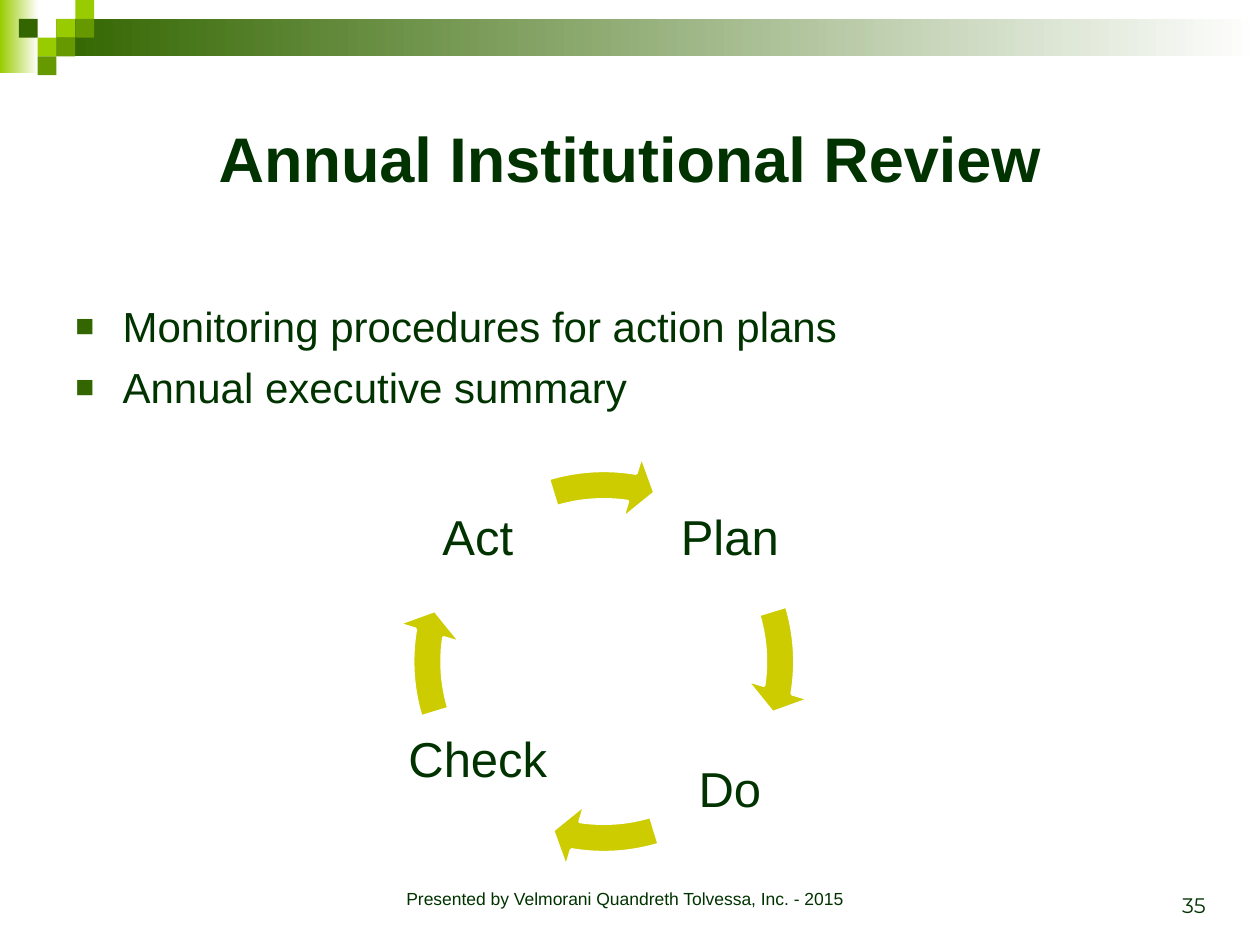
from pptx import Presentation
from pptx.dml.color import RGBColor
from pptx.enum.shapes import MSO_SHAPE
from pptx.enum.text import MSO_ANCHOR, PP_ALIGN
from pptx.oxml.ns import qn
from pptx.util import Pt
from lxml import etree

RECT, ARC_ARROW = MSO_SHAPE.RECTANGLE, MSO_SHAPE.CIRCULAR_ARROW
LEFT, CENTER, RIGHT = PP_ALIGN.LEFT, PP_ALIGN.CENTER, PP_ALIGN.RIGHT
TOP, MIDDLE, BOTTOM = MSO_ANCHOR.TOP, MSO_ANCHOR.MIDDLE, MSO_ANCHOR.BOTTOM

WHITE = RGBColor(0xFF, 0xFF, 0xFF)
INK = RGBColor(0x00, 0x33, 0x00)
DARK = RGBColor(0x33, 0x66, 0x00)
MID = RGBColor(0x66, 0x99, 0x00)
LIME = RGBColor(0x99, 0xCC, 0x00)
OLIVE = RGBColor(0xCC, 0xCC, 0x00)


class Deck:
    def __init__(self, width, height, font="Arial"):
        self.prs = Presentation()
        self.prs.slide_width, self.prs.slide_height = Pt(width), Pt(height)
        self.s = self.prs.slides.add_slide(self.prs.slide_layouts[6])
        self.font = font

    def shape(self, kind, x, y, w, h, color=None):
        sp = self.s.shapes.add_shape(kind, Pt(x), Pt(y), Pt(w), Pt(h))
        sp.shadow.inherit = False
        sp.line.fill.background()
        if color is not None:
            sp.fill.solid()
            sp.fill.fore_color.rgb = color
        return sp

    def fade(self, x, y, w, h, color):
        """Bar that fades from a colour to white, left to right."""
        fill = self.shape(RECT, x, y, w, h).fill
        fill.gradient()
        fill.gradient_angle = 0
        for stop, rgb in zip(fill.gradient_stops, (color, WHITE)):
            stop.color.rgb = rgb

    def arc_arrow(self, x, y, size, adjustments):
        sp = self.shape(ARC_ARROW, x, y, size, size, OLIVE)
        sp.line.color.rgb = WHITE
        sp.line.width = Pt(2)
        for i, value in enumerate(adjustments):
            sp.adjustments[i] = value

    def text(self, x, y, w, h, text, size, align=CENTER, anchor=TOP,
             bold=False, font=None, insets=(7.2, 3.6, 3.6)):
        """Text box; insets are side, top and bottom."""
        tf = self.s.shapes.add_textbox(Pt(x), Pt(y), Pt(w), Pt(h)).text_frame
        tf.word_wrap = True
        tf.vertical_anchor = anchor
        side, top, bottom = insets
        tf.margin_left = tf.margin_right = Pt(side)
        tf.margin_top, tf.margin_bottom = Pt(top), Pt(bottom)
        tf.text = text
        for p in tf.paragraphs:
            p.alignment = align
            for r in p.runs:
                r.font.name = font or self.font
                r.font.size = Pt(size)
                r.font.bold = bold
                r.font.color.rgb = INK
        return tf

    def bullets(self, x, y, w, h, items, size, indent=27):
        tf = self.text(x, y, w, h, "\n".join(items), size, LEFT)
        for p in tf.paragraphs:
            p.space_before = Pt(6)
            pPr = p._p.get_or_add_pPr()
            pPr.set("marL", str(Pt(indent)))
            pPr.set("indent", str(-Pt(indent)))
            color = etree.SubElement(pPr, qn("a:buClr"))
            etree.SubElement(color, qn("a:srgbClr")).set("val", str(DARK))
            etree.SubElement(pPr, qn("a:buSzPct")).set("val", "75000")
            etree.SubElement(pPr, qn("a:buFont")).set("typeface", self.font)
            etree.SubElement(pPr, qn("a:buChar")).set("char", "■")


def main():
    deck = Deck(720, 540)

    # Header band with mosaic tiles
    tile = 10.75
    deck.fade(0, 0, 22, 42, LIME)
    deck.fade(3 * tile, tile, 720 - 3 * tile, 2 * tile, DARK)
    for col, row, color in ((3, 1, LIME), (4, 0, LIME), (4, 1, MID), (2, 2, LIME),
                            (1, 1, DARK), (3, 2, MID), (2, 3, MID)):
        deck.shape(RECT, col * tile, row * tile, tile, tile, color)

    # Title and bullets
    deck.text(36, 36, 648, 108, "Annual Institutional Review", 36,
              anchor=MIDDLE, bold=True)
    deck.bullets(36, 168, 648, 306, ("Monitoring procedures for action plans",
                                     "Annual executive summary"), 24)

    # Cycle: each step sits in a corner, followed by a quarter-turn arrow
    cx, cy, ring, box, offset = 345, 378, 240, 85, 72
    full_turn = 216  # 360 degrees in adjustment units
    steps = (("Plan", 1, -1, 3), ("Do", 1, 1, 3),
             ("Check", -1, 1, 37), ("Act", -1, -1, 3))
    for i, (name, dx, dy, bottom) in enumerate(steps):
        deck.text(cx + dx * offset - box / 2, cy + dy * offset - box / 2, box, box,
                  name, 28, anchor=MIDDLE, insets=(0, 3, bottom))
        turn = i * full_turn / 4
        deck.arc_arrow(cx - ring / 2, cy - ring / 2, ring,
                       (0.07, 4.66, 5.47 + turn, (205.87 + turn) % full_turn, 0.08))

    # Footer and slide number
    deck.text(198, 504, 318, 24,
              "Presented by Velmorani Quandreth Tolvessa, Inc. - 2015", 10)
    deck.text(528, 492, 168, 36, "35", 12, RIGHT, BOTTOM, font="Montserrat")

    deck.prs.save("out.pptx")


if __name__ == "__main__":
    main()
